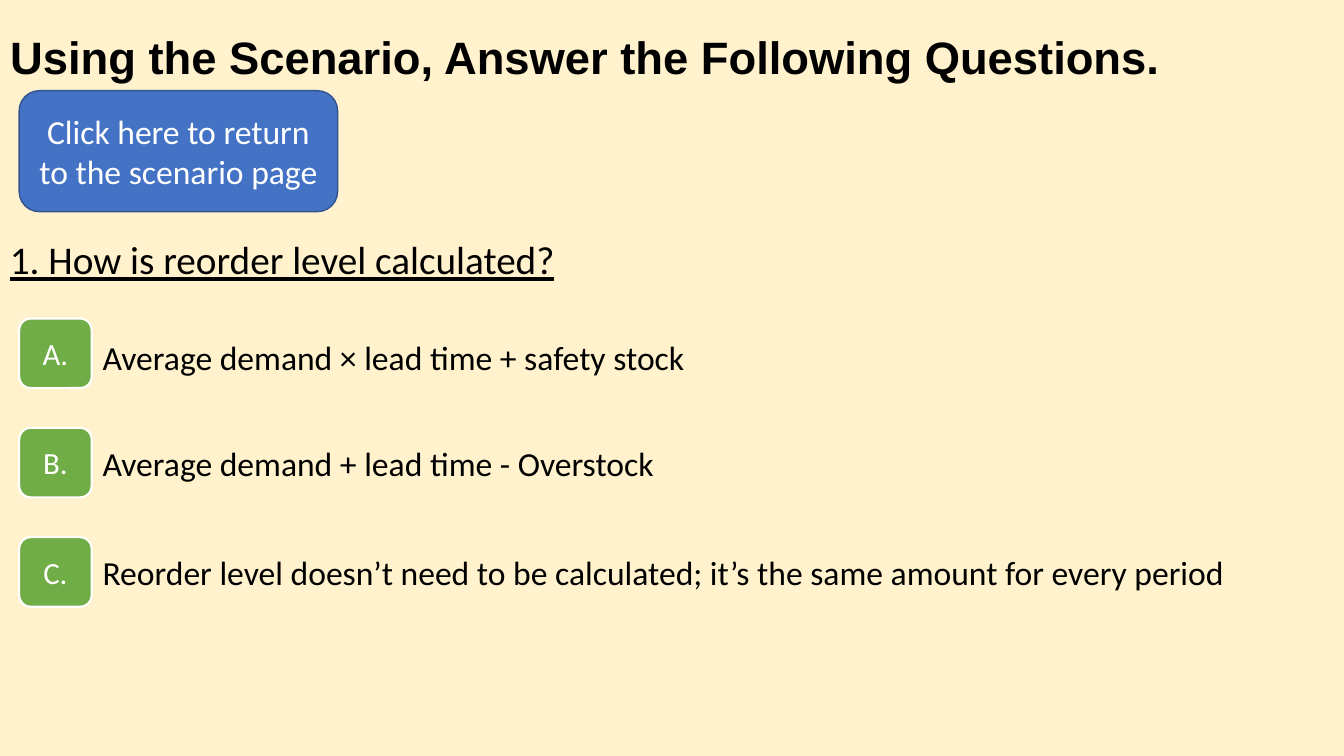
"""Build a multiple-choice quiz slide about the reorder level."""

import dataclasses
import typing

import pptx
import pptx.dml.color
import pptx.enum.shapes
import pptx.enum.text
import pptx.shapes.autoshape
import pptx.slide
import pptx.util

Box = tuple[float, float, float, float]


@dataclasses.dataclass(frozen=True)
class Theme:
    background: str = "FFF2CC"
    ink: str = "000000"
    paper: str = "FFFFFF"
    answer_fill: str = "70AD47"
    return_fill: str = "4472C4"
    return_line: str = "325491"
    title_font: str = "Arial"
    body_font: str = "Calibri"
    title_size: float = 32.4
    question_size: float = 28
    body_size: float = 24
    letter_size: float = 22


@dataclasses.dataclass(frozen=True)
class Answer:
    letter: str
    wording: str
    text_top: float
    text_width: float


@dataclasses.dataclass(frozen=True)
class Button:
    label: str
    box: Box
    fill: str
    line: str
    line_width: float
    text_size: float


THEME = Theme()
BUTTON_LEFT = 13.7
ANSWER_TOP = 227.5
ANSWER_PITCH = 78.1
ANSWER_TEXT_LEFT = 66.2

ANSWERS = [
    Answer("A.", "Average demand × lead time + safety stock", 236.9, 486.7),
    Answer("B.", "Average demand + lead time - Overstock", 312.5, 443.5),
    Answer(
        "C.",
        "Reorder level doesn’t need to be calculated; it’s the same amount for every period",
        391,
        874.8,
    ),
]


def color(value: str) -> pptx.dml.color.RGBColor:
    return pptx.dml.color.RGBColor.from_string(value)


def points(box: Box) -> list[pptx.util.Length]:
    return [pptx.util.Pt(length) for length in box]


def write(
    shape: pptx.shapes.autoshape.Shape,
    text: str,
    size: float,
    ink: str = THEME.ink,
    paragraph_format: dict[str, typing.Any] | None = None,
    **font_format: typing.Any,
) -> None:
    shape.text_frame.word_wrap = True
    paragraph = shape.text_frame.paragraphs[0]
    for name, value in (paragraph_format or {}).items():
        setattr(paragraph, name, value)
    run = paragraph.add_run()
    run.text = text
    run.font.color.rgb = color(ink)
    values = {"name": THEME.body_font, "size": pptx.util.Pt(size)} | font_format
    for name, value in values.items():
        setattr(run.font, name, value)


def set_title(slide: pptx.slide.Slide, text: str, box: Box) -> None:
    title = slide.shapes.title
    for name, value in zip(("left", "top", "width", "height"), points(box)):
        setattr(title, name, value)
    title.text_frame.auto_size = pptx.enum.text.MSO_AUTO_SIZE.NONE
    title.text_frame.vertical_anchor = pptx.enum.text.MSO_ANCHOR.MIDDLE
    paragraph_format = {
        "alignment": pptx.enum.text.PP_ALIGN.LEFT,
        "line_spacing": 0.9,
    }
    write(
        title,
        text,
        THEME.title_size,
        paragraph_format=paragraph_format,
        name=THEME.title_font,
        bold=True,
    )


def add_text(
    slide: pptx.slide.Slide, text: str, box: Box, size: float, **font_format: typing.Any
) -> None:
    shape = slide.shapes.add_textbox(*points(box))
    shape.text_frame.auto_size = pptx.enum.text.MSO_AUTO_SIZE.SHAPE_TO_FIT_TEXT
    write(shape, text, size, **font_format)


def add_button(slide: pptx.slide.Slide, button: Button) -> None:
    shape = slide.shapes.add_shape(
        pptx.enum.shapes.MSO_SHAPE.ROUNDED_RECTANGLE, *points(button.box)
    )
    shape.shadow.inherit = False
    shape.fill.solid()
    shape.fill.fore_color.rgb = color(button.fill)
    shape.line.color.rgb = color(button.line)
    shape.line.width = pptx.util.Pt(button.line_width)
    shape.text_frame.vertical_anchor = pptx.enum.text.MSO_ANCHOR.MIDDLE
    centred = {"alignment": pptx.enum.text.PP_ALIGN.CENTER}
    write(shape, button.label, button.text_size, THEME.paper, centred)


def add_answer(slide: pptx.slide.Slide, answer: Answer, top: float) -> None:
    box = (BUTTON_LEFT, top, 51.8, 49.7)
    add_button(
        slide,
        Button(answer.letter, box, THEME.answer_fill, THEME.paper, 1.5, THEME.letter_size),
    )
    text_box = (ANSWER_TEXT_LEFT, answer.text_top, answer.text_width, 36)
    add_text(slide, answer.wording, text_box, THEME.body_size)


def main() -> None:
    presentation = pptx.Presentation()
    presentation.slide_width = pptx.util.Pt(960)
    presentation.slide_height = pptx.util.Pt(540)
    slide = presentation.slides.add_slide(presentation.slide_layouts[5])
    slide.background.fill.solid()
    slide.background.fill.fore_color.rgb = color(THEME.background)

    set_title(
        slide,
        "Using the Scenario, Answer the Following Questions.",
        (0, 13.7, 917.3, 58.3),
    )
    add_text(
        slide,
        "1. How is reorder level calculated?",
        (0, 164.9, 548.6, 41),
        THEME.question_size,
        underline=True,
    )
    for index, answer in enumerate(ANSWERS):
        add_answer(slide, answer, ANSWER_TOP + index * ANSWER_PITCH)
    add_button(
        slide,
        Button(
            "Click here to return to the scenario page",
            (BUTTON_LEFT, 64.8, 227.5, 86.4),
            THEME.return_fill,
            THEME.return_line,
            1,
            THEME.body_size,
        ),
    )
    presentation.save("out.pptx")


if __name__ == "__main__":
    main()
